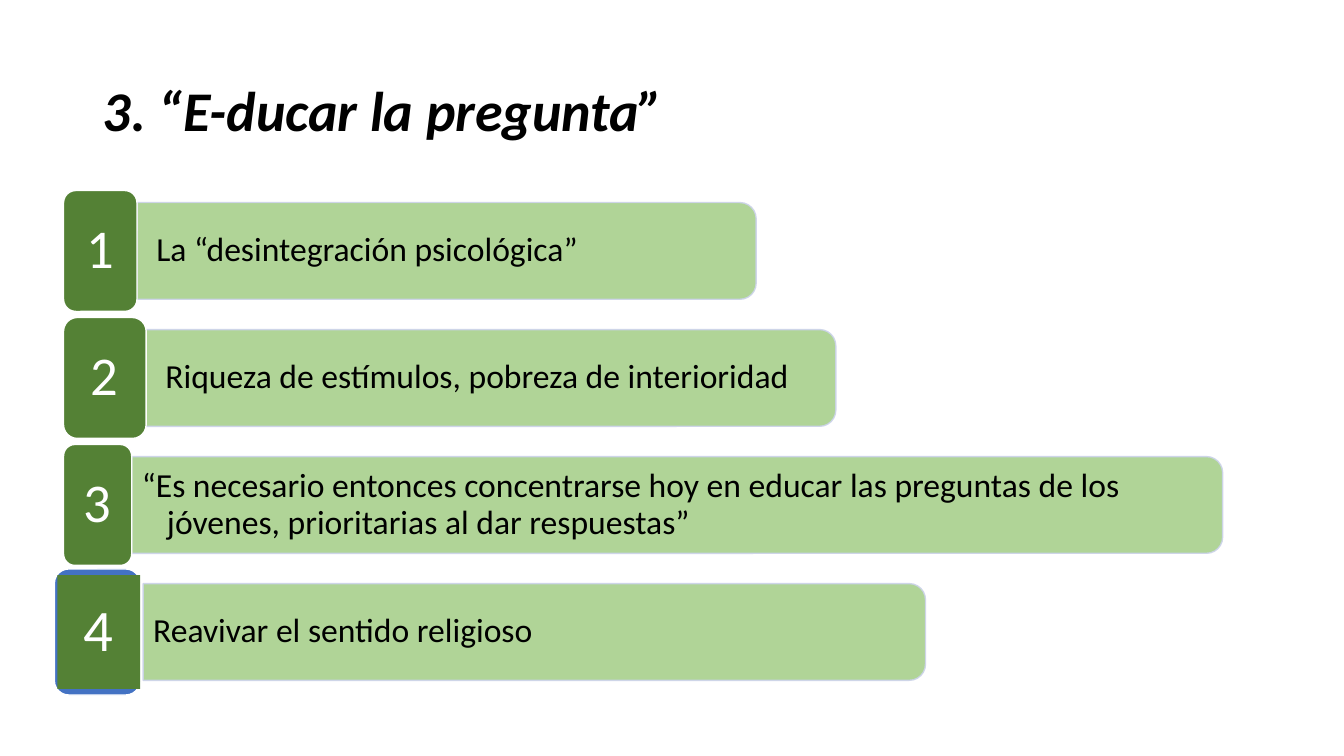
import pptx
import pptx.dml.color
import pptx.enum.shapes
import pptx.enum.text
import pptx.oxml
import pptx.oxml.ns
import pptx.util

COLORS = {
    "text": "000000",
    "number": "FFFFFF",
    "edge": "FFFFFF",
    "badge": "548135",
    "backing": "4372C3",
    "bar": "A8D08C",
    "bar_edge": "CCD3EA",
}
WIDTH, HEIGHT = pptx.util.Inches(13.33), pptx.util.Inches(7.5)
COLUMN, ROW = WIDTH / 100, HEIGHT / 100
BADGE_LEFT, BADGE_HEIGHT, BAR_HEIGHT, TEXT_HEIGHT = 4.73, 16, 12.8, 11.47
FIRST_CENTER, PITCH = 33.2, 16.8
ROUNDING = 0.167
SHAPES = pptx.enum.shapes.MSO_SHAPE
ALIGN = pptx.enum.text.PP_ALIGN
WIDE_INSETS, NARROW_INSETS = (1.43, 1.33), (0.75, 0.67)
POINTS = [
    ("La “desintegración psicológica”", 10.2, 46.06, WIDE_INSETS),
    ("Riqueza de estímulos, pobreza de interioridad", 10.88, 51.31, WIDE_INSETS),
    ("“Es necesario entonces concentrarse hoy en educar las preguntas de los "
     "jóvenes, prioritarias al dar respuestas”", 9.8, 81.17, NARROW_INSETS),
    ("Reavivar el sentido religioso", 10.65, 58.21, NARROW_INSETS),
]


def apply(target, values):
    """Set each attribute of the target from a dict."""
    for name, value in values.items():
        setattr(target, name, value)


def color(name):
    """Return the named colour."""
    return pptx.dml.color.RGBColor.from_string(COLORS[name])


def place(left, center, width, height):
    """Turn grid columns and rows into left, top, width and height."""
    return [round(left * COLUMN), round((center - height / 2) * ROW),
            round(width * COLUMN), round(height * ROW)]


def write(shape, text, size, color_name, align, insets=(0, 0), **font):
    """Put one formatted paragraph into a shape and return it."""
    frame = shape.text_frame
    across, down = round(insets[0] * COLUMN), round(insets[1] * ROW)
    apply(frame, {
        "text": text, "word_wrap": True,
        "auto_size": pptx.enum.text.MSO_AUTO_SIZE.NONE,
        "vertical_anchor": pptx.enum.text.MSO_ANCHOR.MIDDLE,
        "margin_left": across, "margin_right": across,
        "margin_top": down, "margin_bottom": down,
    })
    paragraph = frame.paragraphs[0]
    apply(paragraph, {"alignment": align, "line_spacing": 0.9})
    run_font = paragraph.runs[0].font
    apply(run_font, {"name": "Calibri", "size": pptx.util.Pt(size), **font})
    run_font.color.rgb = color(color_name)
    return paragraph


def add_block(slide, kind, box, fill, edge=None):
    """Add a filled preset shape, outlined if an edge colour is named."""
    shape = slide.shapes.add_shape(kind, *box)
    shape.shadow.inherit = False
    shape.fill.solid()
    shape.fill.fore_color.rgb = color(fill)
    if edge:
        shape.line.color.rgb = color(edge)
        shape.line.width = pptx.util.Pt(1)
    else:
        shape.line.fill.background()
    if len(shape.adjustments):
        shape.adjustments[0] = ROUNDING
    return shape


def add_bar(slide, left, center, length):
    """Add a translucent bar with its right end rounded."""
    x, y, width, height = place(left, center, length, BAR_HEIGHT)
    shift = (width - height) // 2
    bar = add_block(slide, SHAPES.ROUND_2_SAME_RECTANGLE,
                    (x + shift, y - shift, height, width), "bar", "bar_edge")
    bar.rotation = 90
    for element in bar.element.spPr.iter(pptx.oxml.ns.qn("a:srgbClr")):
        namespace = pptx.oxml.ns.nsdecls("a")
        element.append(pptx.oxml.parse_xml(f'<a:alpha {namespace} val="90000"/>'))


def add_point_text(slide, text, left, center, length, insets):
    """Add the text of a point with a hanging indent."""
    box = slide.shapes.add_textbox(*place(left, center, length - 0.37, TEXT_HEIGHT))
    paragraph = write(box, text, 24, "text", ALIGN.LEFT, insets)
    indent = pptx.util.Inches(0.25)
    properties = paragraph._p.get_or_add_pPr()
    properties.set("marL", str(indent))
    properties.set("indent", str(-indent))


def add_badge(slide, number, center, right):
    """Add a rounded number badge that ends where its bar starts."""
    box = place(BADGE_LEFT, center, right - BADGE_LEFT, BADGE_HEIGHT)
    badge = add_block(slide, SHAPES.ROUNDED_RECTANGLE, box, "badge", "edge")
    write(badge, str(number), 39, "number", ALIGN.CENTER)


def add_backed_badge(slide, number, center):
    """Add a square number badge over a rounded backing."""
    add_block(slide, SHAPES.ROUNDED_RECTANGLE,
              place(4.05, center, 6.38, 16.67), "backing", "edge")
    badge = add_block(slide, SHAPES.RECTANGLE,
                      place(4.28, center, 6.15, 15.07), "badge")
    write(badge, str(number), 42, "number", ALIGN.CENTER)


def add_title(slide, text):
    """Fill and move the title placeholder."""
    title = slide.shapes.title
    box = place(6.9, 15, 86.27, 19.33)
    apply(title, dict(zip(("left", "top", "width", "height"), box)))
    write(title, text, 40, "text", ALIGN.LEFT, NARROW_INSETS, bold=True, italic=True)


def main():
    """Build and save the slide."""
    presentation = pptx.Presentation()
    apply(presentation, {"slide_width": WIDTH, "slide_height": HEIGHT})
    slide = presentation.slides.add_slide(presentation.slide_layouts[5])
    add_title(slide, "3. “E-ducar la pregunta”")
    for index, (text, left, length, insets) in enumerate(POINTS):
        center = FIRST_CENTER + index * PITCH
        add_bar(slide, left, center, length)
        add_point_text(slide, text, left, center, length, insets)
        if index < len(POINTS) - 1:
            add_badge(slide, index + 1, center, left)
        else:
            add_backed_badge(slide, index + 1, center)
    presentation.save("out.pptx")


if __name__ == "__main__":
    main()
